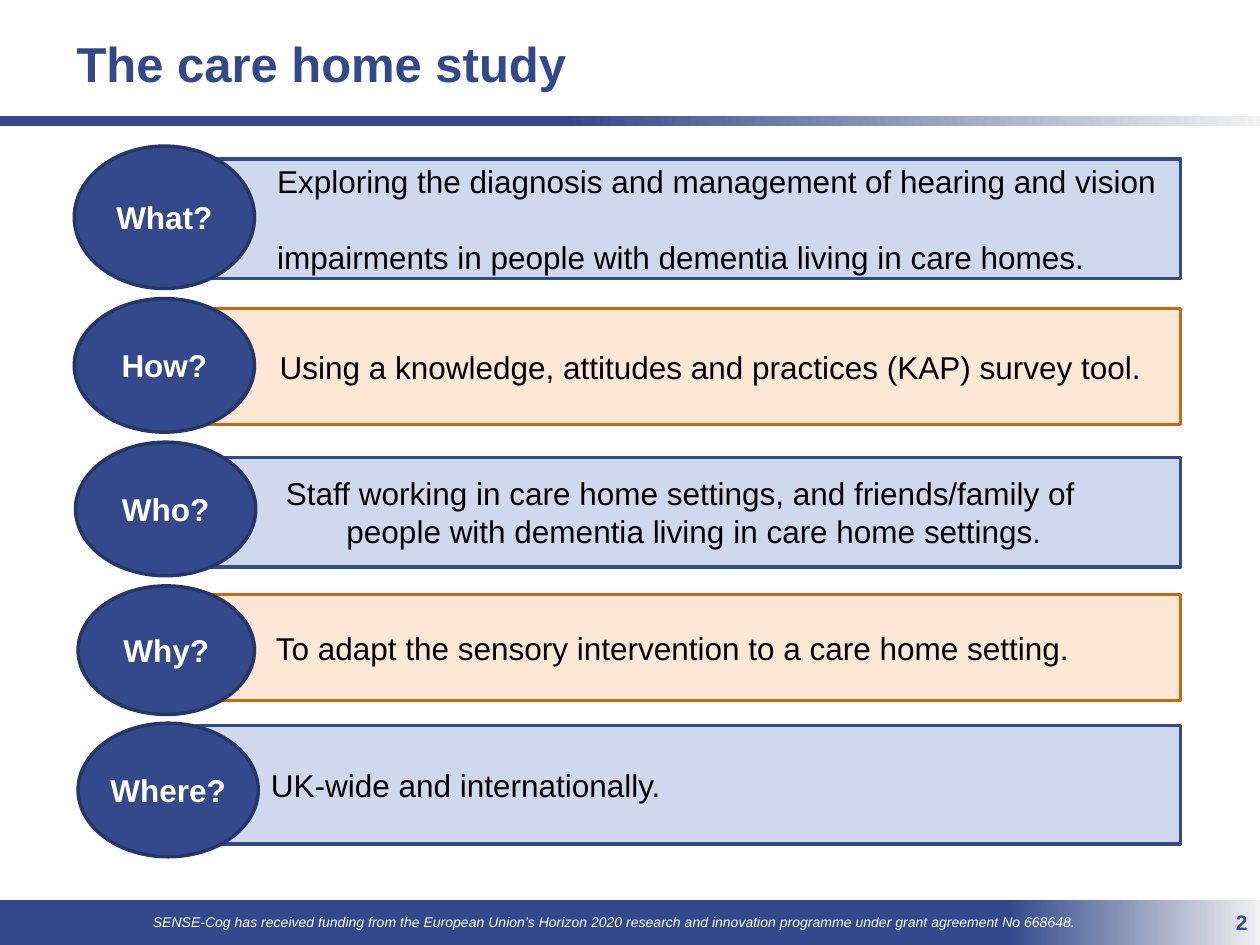
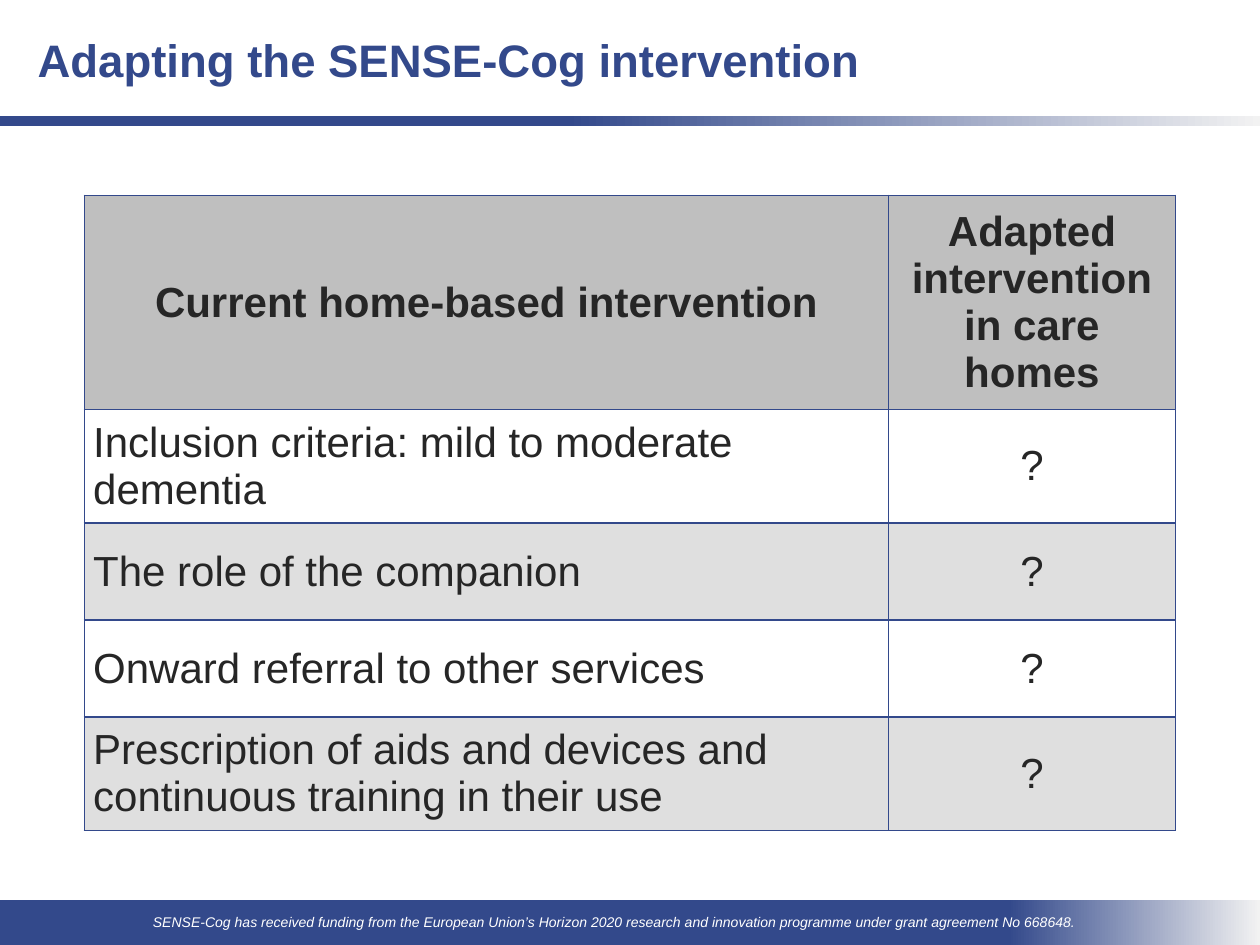
from lxml import etree
from pptx import Presentation
from pptx.dml.color import RGBColor
from pptx.enum.shapes import MSO_SHAPE
from pptx.enum.text import MSO_ANCHOR, PP_ALIGN
from pptx.oxml.ns import qn
from pptx.util import Inches, Pt

RECT = MSO_SHAPE.RECTANGLE
OVAL = MSO_SHAPE.FLOWCHART_CONNECTOR
MIDDLE = MSO_ANCHOR.MIDDLE
LEFT, CENTER, RIGHT = PP_ALIGN.LEFT, PP_ALIGN.CENTER, PP_ALIGN.RIGHT

NAVY = RGBColor(0x33, 0x49, 0x8B)
EDGE = RGBColor(0x26, 0x36, 0x67)
SKY = RGBColor(0xD0, 0xD8, 0xEE)
PEACH = RGBColor(0xFC, 0xE8, 0xD5)
RUST = RGBColor(0xC8, 0x69, 0x0E)
PALE = RGBColor(0xF2, 0xF2, 0xF2)
INK = RGBColor(0x26, 0x26, 0x26)
HEAD = RGBColor(0xBF, 0xBF, 0xBF)
BAND = RGBColor(0xDF, 0xDF, 0xDF)
BLACK = RGBColor(0, 0, 0)
WHITE = RGBColor(0xFF, 0xFF, 0xFF)

FONT = "Arial"
WIDE, HIGH = Inches(10), Inches(7.5)
COLS, ROWS = 100, 75
COL, ROW = WIDE / COLS, HIGH / ROWS
FOOT = (0, 71.4, COLS, 3.6)
FUND = ("SENSE-Cog has received funding from the European Union’s Horizon 2020 "
        "research and innovation programme under grant agreement No 668648.")

TOPICS = [
    ("What?", (5.9, 11.6, 14.3, 11.3), (6.8, 1, 9.5), 22,
     ["Exploring the diagnosis and management of hearing and vision",
      "impairments in people with dementia living in care homes."], 22, 0),
    ("How?", (5.9, 23.7, 14.3, 10.6), (10.3, 0.8, 9.2), 22.2,
     ["Using a knowledge, attitudes and practices (KAP) survey tool."], 0, 0),
    ("Who?", (6, 35.1, 14.3, 10.6), (10.7, 1.2, 8.7), 22.7,
     ["Staff working in care home settings, and friends/family of",
      "people with dementia living in care home settings."], 0, 4.8),
    ("Why?", (6.2, 46.5, 14, 10.2), (9.2, 0.7, 8.4), 21.9,
     ["To adapt the sensory intervention to a care home setting."], 0, 0),
    ("Where?", (6.2, 57.4, 14.3, 10.6), (9.3, 0.2, 9.4), 21.5,
     ["UK-wide and internationally."], 0, 0),
]
BAR_END = 93.7
TINTS = [(SKY, NAVY), (PEACH, RUST)]

GRID = [
    ("Current home-based intervention", "Adapted intervention in care homes"),
    ("Inclusion criteria: mild to moderate dementia", "?"),
    ("The role of the companion", "?"),
    ("Onward referral to other services", "?"),
    ("Prescription of aids and devices and continuous training in their use", "?"),
]
WIDTHS = [63.8, 22.8]
HEIGHTS = [8.3, 5.7, 7.7, 7.7, 7.7]


def place(box):
    left, top, width, height = box
    return [round(v) for v in (left * COL, top * ROW, width * COL, height * ROW)]


def write(frame, lines, size, color, align=LEFT, bold=False, italic=False):
    frame.text = "\n".join(lines)
    for para in frame.paragraphs:
        para.alignment = align
        font = para.runs[0].font
        font.name, font.size = FONT, Pt(size)
        font.bold, font.italic = bold, italic
        font.color.rgb = color


def label(slide, box, text, size, color, **style):
    frame = slide.shapes.add_textbox(*place(box)).text_frame
    frame.word_wrap = True
    frame.vertical_anchor = MIDDLE
    write(frame, [text], size, color, **style)


def block(slide, kind, box, fill, edge):
    shape = slide.shapes.add_shape(kind, *place(box))
    shape.shadow.inherit = False
    shape.fill.solid()
    shape.fill.fore_color.rgb = fill
    shape.line.color.rgb = edge
    shape.line.width = Pt(2)
    shape.text_frame.vertical_anchor = MIDDLE
    return shape


def fade(slide, box, start):
    shape = slide.shapes.add_shape(RECT, *place(box))
    shape.shadow.inherit = False
    shape.line.fill.background()
    shape.fill.gradient()
    shape.fill.gradient_angle = 0
    stops = zip(shape.fill.gradient_stops, (start, 1), (NAVY, PALE))
    for stop, spot, color in stops:
        stop.position = spot
        stop.color.rgb = color


def frame_slide(deck, title, box, size):
    slide = deck.slides.add_slide(deck.slide_layouts[6])
    fade(slide, FOOT, 0.8)
    fade(slide, (0, 9.2, COLS, 0.8), 0.45)
    label(slide, (5.9, FOOT[1], 85.8, FOOT[3]), FUND, 8, WHITE,
          align=CENTER, italic=True)
    label(slide, box, title, size, NAVY, bold=True)
    return slide


def topic(slide, box, name, offset, start, lines, gap, indent, tint):
    left, top, width, height = box
    shift, drop, depth = offset
    edge = left + shift
    bar = block(slide, RECT, (edge, top + drop, BAR_END - edge, depth), *tint)
    frame = bar.text_frame
    frame.margin_left = round((start - edge) * COL)
    write(frame, lines, 18, BLACK)
    for para in frame.paragraphs[1:]:
        para.space_before = Pt(gap)
        para._p.get_or_add_pPr().set("marL", str(round(indent * COL)))
    oval = block(slide, OVAL, box, NAVY, EDGE)
    oval.text_frame.word_wrap = False
    write(oval.text_frame, [name], 18, WHITE, align=CENTER, bold=True)


def study(deck):
    slide = frame_slide(deck, "The care home study", (5.1, 0.9, 69.4, 8.2), 28)
    label(slide, (91.6, FOOT[1], 8.4, FOOT[3]), "2", 12, NAVY,
          align=RIGHT, bold=True)
    for i, (name, box, offset, start, lines, gap, indent) in enumerate(TOPICS):
        topic(slide, box, name, offset, start, lines, gap, indent, TINTS[i % 2])


def outline(cell):
    props = cell._tc.get_or_add_tcPr()
    for i, side in enumerate(("lnL", "lnR", "lnT", "lnB")):
        line = etree.Element(qn("a:" + side), w=str(Pt(1)))
        fill = etree.SubElement(line, qn("a:solidFill"))
        etree.SubElement(fill, qn("a:srgbClr"), val=str(NAVY))
        props.insert(i, line)


def matrix(slide, left, top):
    box = (left, top, sum(WIDTHS), sum(HEIGHTS))
    table = slide.shapes.add_table(len(GRID), len(WIDTHS), *place(box)).table
    table.horz_banding = False
    for col, width in zip(table.columns, WIDTHS):
        col.width = round(width * COL)
    for row, height in zip(table.rows, HEIGHTS):
        row.height = round(height * ROW)
    for r, texts in enumerate(GRID):
        tint = HEAD if r == 0 else WHITE if r % 2 else BAND
        for c, text in enumerate(texts):
            cell = table.cell(r, c)
            cell.vertical_anchor = MIDDLE
            cell.margin_left = cell.margin_right = Inches(0.07)
            cell.fill.solid()
            cell.fill.fore_color.rgb = tint
            align = CENTER if r == 0 or c else LEFT
            write(cell.text_frame, [text], 24, INK, align=align, bold=r == 0)
            outline(cell)


def adapting(deck):
    slide = frame_slide(deck, "Adapting the SENSE-Cog intervention",
                        (2, 0, 74.8, 9.4), 26)
    matrix(slide, 6.7, 15.5)


def main():
    deck = Presentation()
    deck.slide_width, deck.slide_height = WIDE, HIGH
    study(deck)
    adapting(deck)
    deck.save("out.pptx")


if __name__ == "__main__":
    main()
